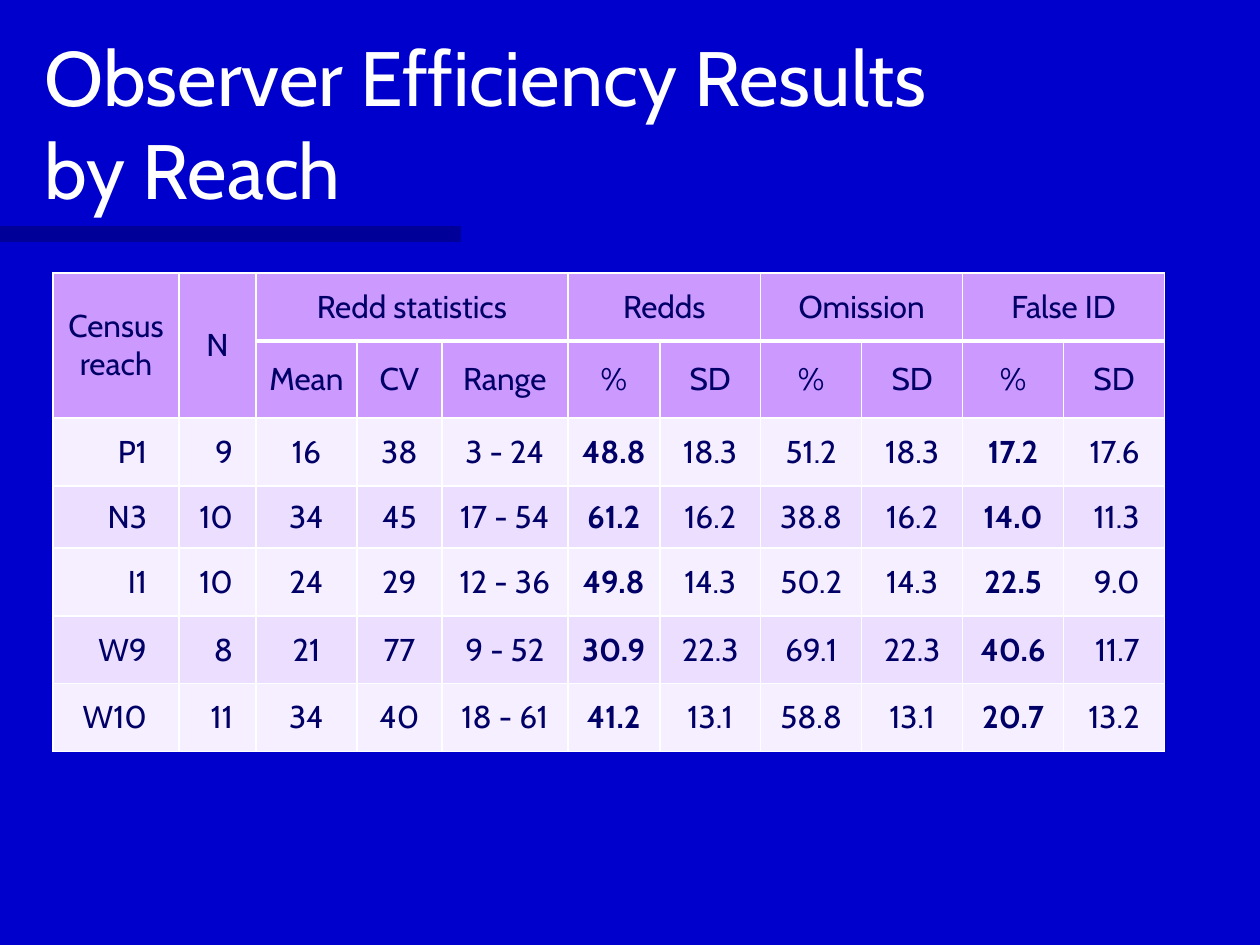
import pptx
import pptx.dml.color
import pptx.enum.shapes
import pptx.enum.text
import pptx.oxml
import pptx.oxml.ns
import pptx.util

RGBColor = pptx.dml.color.RGBColor
ALIGN = pptx.enum.text.PP_ALIGN
ANCHOR = pptx.enum.text.MSO_ANCHOR

PX = 914400 // 126
FONT = "Cabin"
BLUE = RGBColor(0x00, 0x00, 0xCC)
NAVY = RGBColor(0x00, 0x00, 0x66)
WHITE = RGBColor(0xFF, 0xFF, 0xFF)
PURPLE = RGBColor(0xCC, 0x99, 0xFF)
PALE = RGBColor(0xF6, 0xEF, 0xFF)
LILAC = RGBColor(0xEC, 0xDE, 0xFF)

COLUMN_WIDTHS = [126, 77, 101, 85, 126, 92] + [101] * 5
ROW_HEIGHTS = [68, 68, 68, 62, 68, 68, 68]
HEADER_ROWS = 2
BOLD_COLUMNS = {5, 9}
RIGHT_MARGINS = {0: 32, 1: 23, 10: 25}
MERGES = [
    (0, 0, 1, 0), (0, 1, 1, 1), (0, 2, 0, 4),
    (0, 5, 0, 6), (0, 7, 0, 8), (0, 9, 0, 10),
]
ROWS = [
    ["Census reach", "N", "Redd statistics", "", "", "Redds", "",
     "Omission", "", "False ID", ""],
    ["", "", "Mean", "CV", "Range"] + ["%", "SD"] * 3,
    ["P1", "9", "16", "38", "3 - 24", "48.8", "18.3", "51.2", "18.3", "17.2", "17.6"],
    ["N3", "10", "34", "45", "17 - 54", "61.2", "16.2", "38.8", "16.2", "14.0", "11.3"],
    ["I1", "10", "24", "29", "12 - 36", "49.8", "14.3", "50.2", "14.3", "22.5", "9.0"],
    ["W9", "8", "21", "77", "9 - 52", "30.9", "22.3", "69.1", "22.3", "40.6", "11.7"],
    ["W10", "11", "34", "40", "18 - 61", "41.2", "13.1", "58.8", "13.1", "20.7", "13.2"],
]


def px(length):
    return pptx.util.Emu(length * PX)


def add_span(para, text, size, color, bold=False):
    span = para.add_run()
    span.text = text
    span.font.name = FONT
    span.font.size = pptx.util.Pt(size)
    span.font.bold = bold
    span.font.color.rgb = color


def add_bar(page):
    bar = page.shapes.add_shape(
        pptx.enum.shapes.MSO_SHAPE.RECTANGLE, px(0), px(226), px(461), px(16))
    bar.shadow.inherit = False
    bar.line.fill.background()
    bar.fill.solid()
    bar.fill.fore_color.rgb = NAVY
    color = bar.fill._xPr.find(".//" + pptx.oxml.ns.qn("a:srgbClr"))
    color.append(pptx.oxml.parse_xml(
        f'<a:alpha {pptx.oxml.ns.nsdecls("a")} val="50000"/>'))


def fill_title(page):
    title = page.shapes.title
    title.left, title.top, title.width, title.height = px(32), px(63), px(1071), px(158)
    frame = title.text_frame
    frame.word_wrap = True
    frame.auto_size = pptx.enum.text.MSO_AUTO_SIZE.NONE
    frame.vertical_anchor = ANCHOR.BOTTOM
    para = frame.paragraphs[0]
    para.alignment = ALIGN.LEFT
    add_span(para, "Observer Efficiency Results ", 44, WHITE)
    para.add_line_break()
    add_span(para, "by Reach", 44, WHITE)


def set_borders(cell, widths):
    properties = cell._tc.get_or_add_tcPr()
    for side, points in widths.items():
        properties.append(pptx.oxml.parse_xml(
            f'<a:ln{side} {pptx.oxml.ns.nsdecls("a")} w="{points * 12700}">'
            f'<a:solidFill><a:srgbClr val="{WHITE}"/></a:solidFill></a:ln{side}>'))


def format_cell(cell, row, column, text):
    is_header = row < HEADER_ROWS
    under_group = column >= 2
    set_borders(cell, {
        "L": 1,
        "R": 1,
        "T": 3 if row == 1 and under_group else 1,
        "B": 3 if row == 0 and under_group else 1,
    })
    cell.fill.solid()
    cell.fill.fore_color.rgb = PURPLE if is_header else (PALE, LILAC)[row % 2]
    cell.vertical_anchor = ANCHOR.MIDDLE
    cell.margin_left = cell.margin_right = px(9)
    cell.margin_top = cell.margin_bottom = 0
    para = cell.text_frame.paragraphs[0]
    para.alignment = ALIGN.CENTER
    if not is_header and column in RIGHT_MARGINS:
        para.alignment = ALIGN.RIGHT
        cell.margin_right = px(RIGHT_MARGINS[column])
    if text:
        add_span(para, text, 18, NAVY, not is_header and column in BOLD_COLUMNS)
    else:
        para.font.size = pptx.util.Pt(18)


def add_results_table(page):
    table = page.shapes.add_table(
        len(ROWS), len(COLUMN_WIDTHS), px(53), px(273),
        px(sum(COLUMN_WIDTHS)), px(sum(ROW_HEIGHTS))).table
    table.first_row = False
    table.horz_banding = False
    for column, width in zip(table.columns, COLUMN_WIDTHS):
        column.width = px(width)
    for row, height in zip(table.rows, ROW_HEIGHTS):
        row.height = px(height)
    for top, left, bottom, right in MERGES:
        table.cell(top, left).merge(table.cell(bottom, right))
    for row, texts in enumerate(ROWS):
        for column, text in enumerate(texts):
            format_cell(table.cell(row, column), row, column, text)


def main():
    deck = pptx.Presentation()
    deck.slide_width, deck.slide_height = px(1260), px(945)
    page = deck.slides.add_slide(deck.slide_layouts.get_by_name("Title Only"))
    page.background.fill.solid()
    page.background.fill.fore_color.rgb = BLUE
    add_bar(page)
    fill_title(page)
    add_results_table(page)
    deck.save("out.pptx")


if __name__ == "__main__":
    main()
